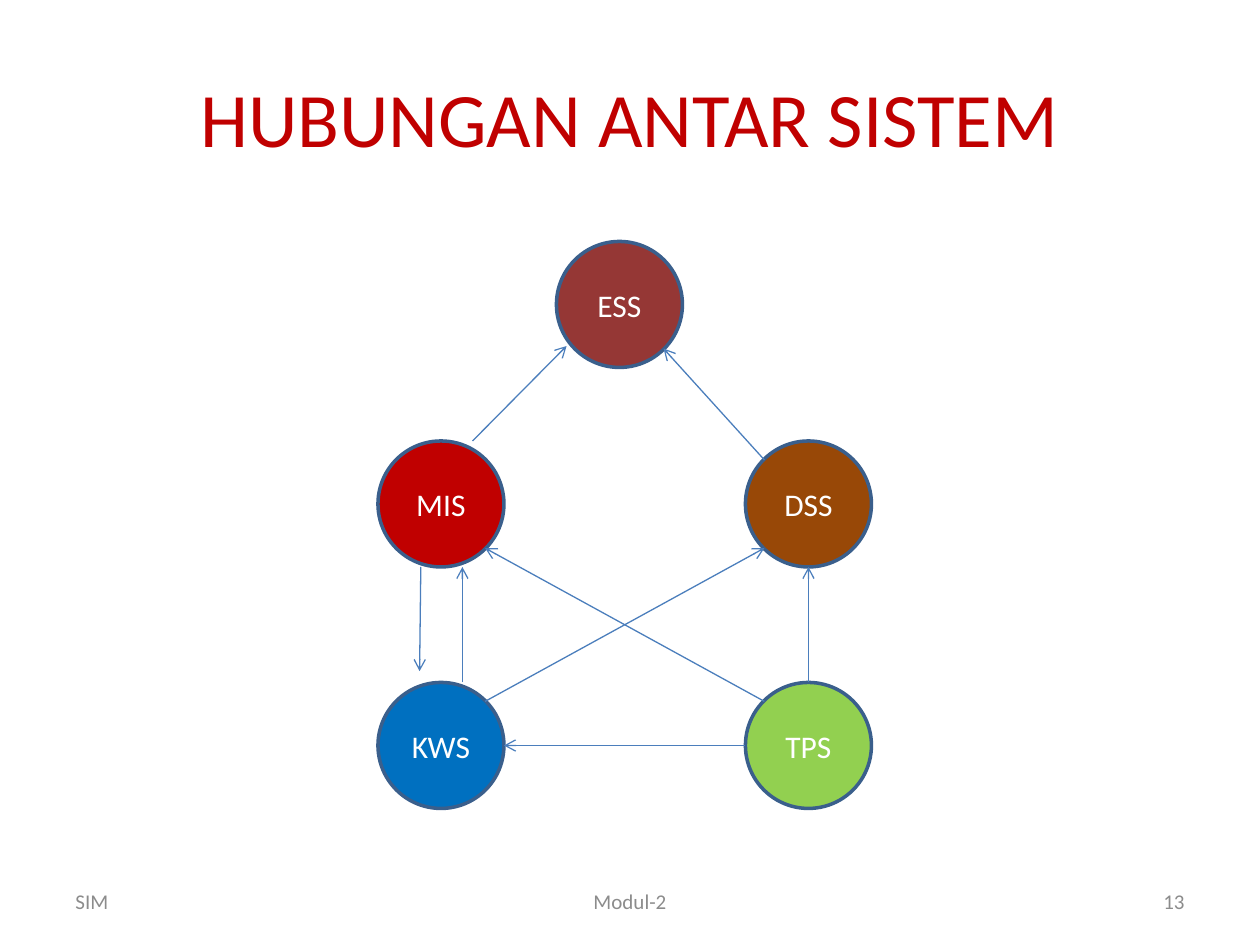
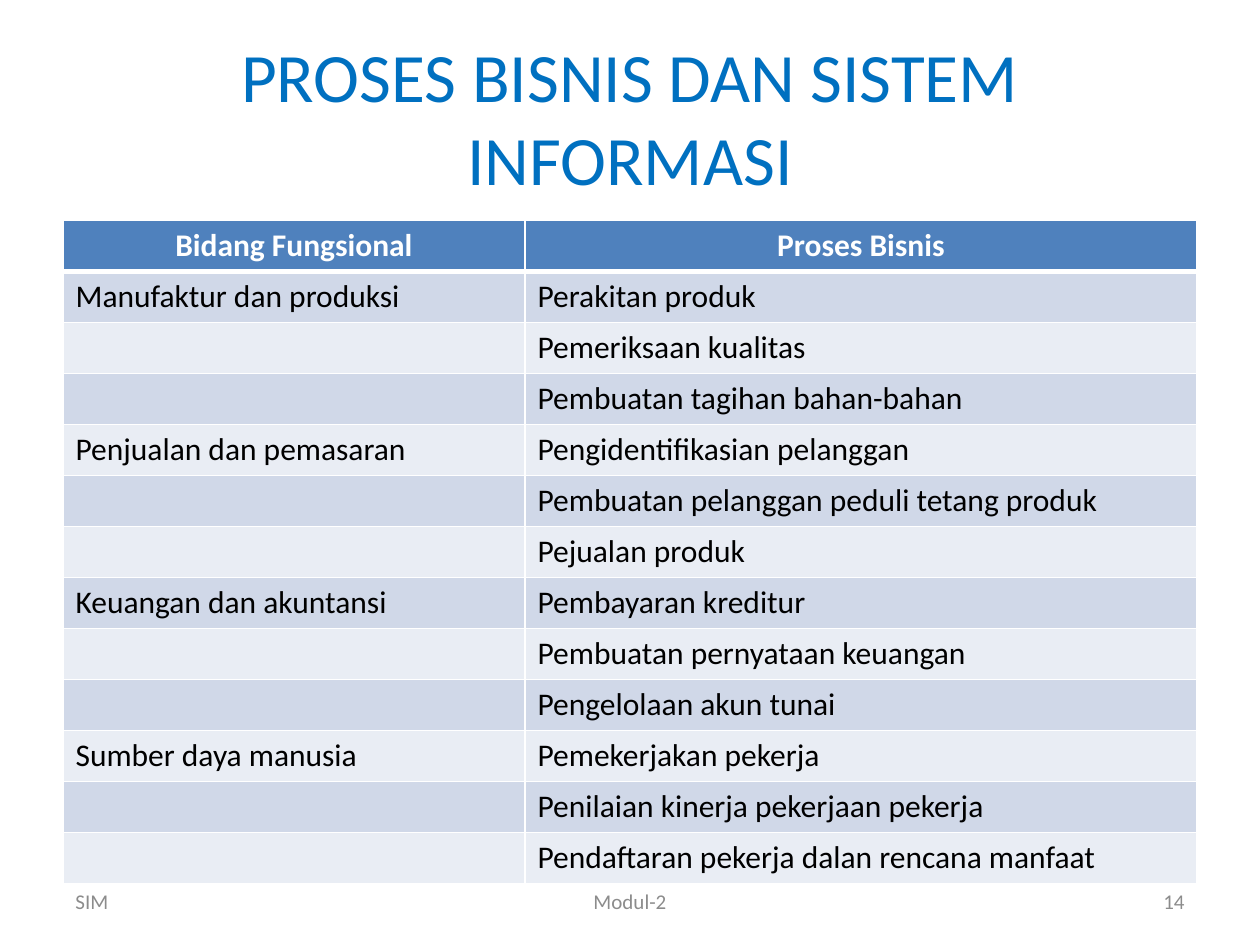
from dataclasses import dataclass

from lxml import etree
from pptx import Presentation
from pptx.dml.color import RGBColor
from pptx.enum.shapes import MSO_CONNECTOR, MSO_SHAPE
from pptx.enum.text import MSO_ANCHOR, PP_ALIGN
from pptx.oxml.ns import qn
from pptx.slide import Slide
from pptx.table import _Cell
from pptx.text.text import TextFrame
from pptx.util import Emu, Inches, Pt

LEFT, CENTER, RIGHT = PP_ALIGN.LEFT, PP_ALIGN.CENTER, PP_ALIGN.RIGHT
MIDDLE = MSO_ANCHOR.MIDDLE
OVAL = MSO_SHAPE.OVAL
STRAIGHT = MSO_CONNECTOR.STRAIGHT

SLIDE_WIDTH, SLIDE_HEIGHT = Inches(10), Inches(7.5)
GRID_COLUMNS, GRID_ROWS = 120, 90


@dataclass(frozen=True)
class Theme:
    font: str = "Calibri"
    white: str = "FFFFFF"
    black: str = "000000"
    red: str = "C00000"
    maroon: str = "953735"
    brown: str = "984807"
    blue: str = "0070C0"
    green: str = "92D050"
    outline: str = "3A5F8C"
    arrow: str = "4B7EBC"
    footer: str = "8C8C8C"
    header: str = "4F81BD"
    bands: tuple[str, str] = ("D0D8E8", "E9EDF4")
    title_size: float = 44
    long_title_size: float = 39.6
    body_size: float = 18
    footer_size: float = 12
    outline_width: float = 2
    arrow_width: float = 0.75
    border_width: float = 1
    header_border_width: float = 3


THEME = Theme()


@dataclass(frozen=True)
class Area:
    column: float
    row: float
    columns: float
    rows: float

    def emu(self) -> tuple[Emu, Emu, Emu, Emu]:
        return across(self.column), down(self.row), across(self.columns), down(self.rows)


@dataclass(frozen=True)
class TextStyle:
    size: float
    color: str
    align: PP_ALIGN = LEFT
    bold: bool = False


@dataclass(frozen=True)
class System:
    column: float
    row: float
    color: str

    def point(self, share: tuple[float, float]) -> tuple[Emu, Emu]:
        return (across(self.column + share[0] * DIAMETER),
                down(self.row + share[1] * DIAMETER))


@dataclass(frozen=True)
class Flow:
    source: str
    exit: tuple[float, float]
    target: str
    entry: tuple[float, float]


@dataclass(frozen=True)
class FooterItem:
    text: str
    column: float
    columns: float
    align: PP_ALIGN


DIAMETER = 12
LEFT_COLUMN, RIGHT_COLUMN = 36, 71
TOP_ROW, MIDDLE_ROW, BOTTOM_ROW = 23, 42, 65
SYSTEMS = {
    "ESS": System(53, TOP_ROW, THEME.maroon),
    "MIS": System(LEFT_COLUMN, MIDDLE_ROW, THEME.red),
    "DSS": System(RIGHT_COLUMN, MIDDLE_ROW, THEME.brown),
    "KWS": System(LEFT_COLUMN, BOTTOM_ROW, THEME.blue),
    "TPS": System(RIGHT_COLUMN, BOTTOM_ROW, THEME.green),
}

NEAR, FAR = 0.15, 0.85
FLOWS = [
    Flow("MIS", (0.75, 0), "ESS", (0.08, 0.83)),
    Flow("DSS", (NEAR, NEAR), "ESS", (FAR, FAR)),
    Flow("TPS", (NEAR, NEAR), "MIS", (FAR, FAR)),
    Flow("KWS", (FAR, NEAR), "DSS", (NEAR, FAR)),
    Flow("TPS", (0, 0.5), "KWS", (1, 0.5)),
    Flow("TPS", (0.5, 0), "DSS", (0.5, 1)),
    Flow("MIS", (0.34, 1), "KWS", (0.33, -0.09)),
    Flow("KWS", (0.67, 0), "MIS", (0.67, 1)),
]

HEADINGS = ("Bidang Fungsional", "Proses Bisnis")
PROCESSES = {
    "Manufaktur dan produksi": (
        "Perakitan produk",
        "Pemeriksaan kualitas",
        "Pembuatan tagihan bahan-bahan",
    ),
    "Penjualan dan pemasaran": (
        "Pengidentifikasian pelanggan",
        "Pembuatan pelanggan peduli tetang produk",
        "Pejualan produk",
    ),
    "Keuangan dan akuntansi": (
        "Pembayaran kreditur",
        "Pembuatan pernyataan keuangan",
        "Pengelolaan akun tunai",
    ),
    "Sumber daya manusia": (
        "Pemekerjakan pekerja",
        "Penilaian kinerja pekerjaan pekerja",
        "Pendaftaran pekerja dalan rencana manfaat",
    ),
}

TITLE_AREA = Area(6, 3.6, 108, 15)
FOOTER_ROW, FOOTER_ROWS = 83.4, 4.8
TABLE_COLUMN, TABLE_ROW = 6, 21
TABLE_COLUMNS = (44, 64)
TABLE_ROW_HEIGHT = 4.86


def across(columns: float) -> Emu:
    return Emu(round(SLIDE_WIDTH * columns / GRID_COLUMNS))


def down(rows: float) -> Emu:
    return Emu(round(SLIDE_HEIGHT * rows / GRID_ROWS))


def write(frame: TextFrame, text: str, style: TextStyle) -> None:
    frame.text = text
    frame.word_wrap = True
    paragraph = frame.paragraphs[0]
    paragraph.alignment = style.align
    for run in paragraph.runs:
        run.font.name = THEME.font
        run.font.size = Pt(style.size)
        run.font.bold = style.bold
        run.font.color.rgb = RGBColor.from_string(style.color)


def add_label(slide: Slide, area: Area, text: str, style: TextStyle) -> None:
    frame = slide.shapes.add_textbox(*area.emu()).text_frame
    frame.vertical_anchor = MIDDLE
    write(frame, text, style)


def add_page(deck: Presentation, title: str, style: TextStyle, number: int) -> Slide:
    slide = deck.slides.add_slide(deck.slide_layouts[6])
    add_label(slide, TITLE_AREA, title, style)
    for item in (FooterItem("SIM", 6, 28, LEFT),
                 FooterItem(str(number), 86, 28, RIGHT),
                 FooterItem("Modul-2", 41, 38, CENTER)):
        add_label(slide, Area(item.column, FOOTER_ROW, item.columns, FOOTER_ROWS),
                  item.text, TextStyle(THEME.footer_size, THEME.footer, item.align))
    return slide


def add_system(slide: Slide, name: str, system: System) -> None:
    area = Area(system.column, system.row, DIAMETER, DIAMETER)
    circle = slide.shapes.add_shape(OVAL, *area.emu())
    circle.shadow.inherit = False
    circle.fill.solid()
    circle.fill.fore_color.rgb = RGBColor.from_string(system.color)
    circle.line.color.rgb = RGBColor.from_string(THEME.outline)
    circle.line.width = Pt(THEME.outline_width)
    circle.text_frame.vertical_anchor = MIDDLE
    write(circle.text_frame, name, TextStyle(THEME.body_size, THEME.white, CENTER))


def add_flow(slide: Slide, flow: Flow) -> None:
    start = SYSTEMS[flow.source].point(flow.exit)
    end = SYSTEMS[flow.target].point(flow.entry)
    arrow = slide.shapes.add_connector(STRAIGHT, *start, *end)
    arrow.line.color.rgb = RGBColor.from_string(THEME.arrow)
    arrow.line.width = Pt(THEME.arrow_width)
    etree.SubElement(arrow.line._get_or_add_ln(), qn("a:tailEnd"), type="arrow")
    etree.SubElement(arrow._element.spPr, qn("a:effectLst"))


def add_border(cell: _Cell, side: str, width: float) -> None:
    border = etree.SubElement(cell._tc.get_or_add_tcPr(), qn(f"a:ln{side}"), w=str(Pt(width)))
    fill = etree.SubElement(border, qn("a:solidFill"))
    etree.SubElement(fill, qn("a:srgbClr"), val=THEME.white)


def fill_cell(cell: _Cell, text: str, row: int) -> None:
    is_header = row == 0
    if is_header:
        style = TextStyle(THEME.body_size, THEME.white, CENTER, True)
    else:
        style = TextStyle(THEME.body_size, THEME.black)
    write(cell.text_frame, text, style)
    top = THEME.header_border_width if row == 1 else THEME.border_width
    bottom = THEME.header_border_width if is_header else THEME.border_width
    for side, width in (("L", THEME.border_width), ("R", THEME.border_width),
                        ("T", top), ("B", bottom)):
        add_border(cell, side, width)
    color = THEME.header if is_header else THEME.bands[(row - 1) % 2]
    cell.fill.solid()
    cell.fill.fore_color.rgb = RGBColor.from_string(color)


def add_process_table(slide: Slide) -> None:
    entries = [HEADINGS]
    for field, processes in PROCESSES.items():
        entries += [(field if index == 0 else "", process)
                    for index, process in enumerate(processes)]
    area = Area(TABLE_COLUMN, TABLE_ROW, sum(TABLE_COLUMNS), TABLE_ROW_HEIGHT * len(entries))
    table = slide.shapes.add_table(len(entries), len(HEADINGS), *area.emu()).table
    table.horz_banding = False
    for column, columns in zip(table.columns, TABLE_COLUMNS):
        column.width = across(columns)
    for row, entry in enumerate(entries):
        table.rows[row].height = down(TABLE_ROW_HEIGHT)
        for column, text in enumerate(entry):
            fill_cell(table.cell(row, column), text, row)


def main() -> None:
    deck = Presentation()
    deck.slide_width, deck.slide_height = SLIDE_WIDTH, SLIDE_HEIGHT

    relations = add_page(deck, "HUBUNGAN ANTAR SISTEM",
                         TextStyle(THEME.title_size, THEME.red, CENTER), 13)
    for name, system in SYSTEMS.items():
        add_system(relations, name, system)
    for flow in FLOWS:
        add_flow(relations, flow)

    business = add_page(deck, "PROSES BISNIS DAN SISTEM INFORMASI",
                        TextStyle(THEME.long_title_size, THEME.blue, CENTER), 14)
    add_process_table(business)

    deck.save("out.pptx")


if __name__ == "__main__":
    main()
